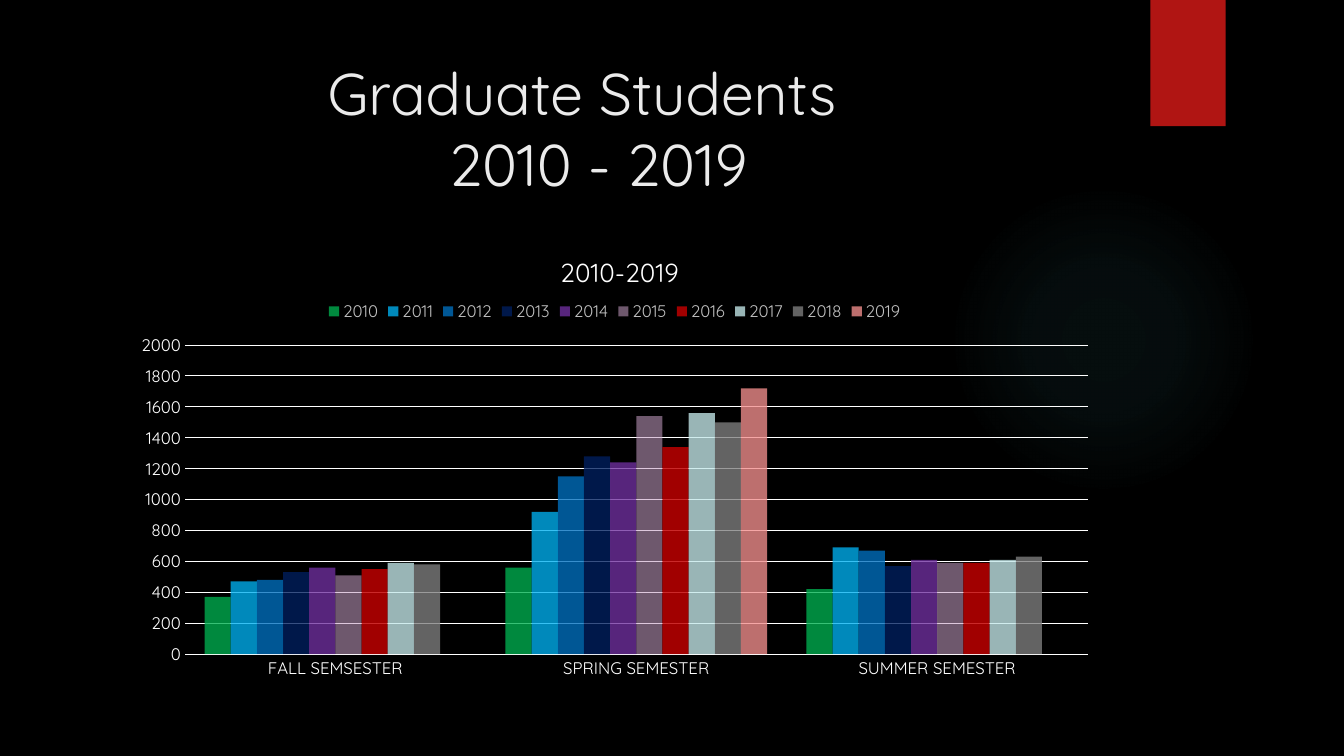
import lxml.etree
import pptx
import pptx.chart.data
import pptx.dml.color
import pptx.enum.chart
import pptx.enum.shapes
import pptx.enum.text
import pptx.oxml
import pptx.oxml.ns
import pptx.util
from pptx.util import Cm

FONT = "Quicksand"
SEMESTERS = ["FALL SEMSESTER", "SPRING SEMESTER", "SUMMER SEMESTER"]
# Year, students per semester, colour, opacity in percent
YEARS = [
    ("2010", (370, 560, 420), "00B050", 78),
    ("2011", (470, 920, 690), "00B0F0", 78),
    ("2012", (480, 1150, 670), "0070C0", 78),
    ("2013", (530, 1280, 570), "002060", 78),
    ("2014", (560, 1240, 610), "7030A0", 78),
    ("2015", (510, 1540, 590), "C59EC3", 56),
    ("2016", (550, 1340, 590), "C00000", 84),
    ("2017", (590, 1560, 610), "C5E8EA", 78),
    ("2018", (580, 1500, 630), "808080", 78),
    ("2019", (None, 1720, None), "F38F8D", 78),
]
GLOW_STOPS = [(0, 7), (36, 6), (69, 0)]


def paint(color_format, color):
    color_format.rgb = pptx.dml.color.RGBColor.from_string(color)


def fill_solid(fill, color):
    fill.solid()
    paint(fill.fore_color, color)


def set_format(target, values):
    for name, value in values.items():
        setattr(target, name, value)


def set_font(font, size, color):
    set_format(font, {"name": FONT, "size": pptx.util.Pt(size), "bold": False})
    paint(font.color, color)


def add_plain_shape(slide, kind, left, top, width, height, color):
    shape = slide.shapes.add_shape(kind, left, top, width, height)
    shape.shadow.inherit = False
    shape.line.fill.background()
    fill_solid(shape.fill, color)
    return shape


def add_glow(slide):
    glow = add_plain_shape(slide, pptx.enum.shapes.MSO_SHAPE.OVAL,
                           Cm(23.9), Cm(4.65), Cm(7.82), Cm(7.82), "50B9C1")
    stops = "".join(
        f'<a:gs pos="{position * 1000}"><a:srgbClr val="50B9C1">'
        f'<a:alpha val="{opacity * 1000}"/></a:srgbClr></a:gs>'
        for position, opacity in GLOW_STOPS)
    gradient = pptx.oxml.parse_xml(
        f'<a:gradFill {pptx.oxml.ns.nsdecls("a")}><a:gsLst>{stops}</a:gsLst>'
        '<a:path path="circle"><a:fillToRect l="50000" t="50000" r="50000" b="50000"/>'
        '</a:path></a:gradFill>')
    solid = glow.element.spPr.find(pptx.oxml.ns.qn("a:solidFill"))
    glow.element.spPr.replace(solid, gradient)


def add_title(slide, text):
    box = slide.shapes.add_textbox(Cm(1.8), Cm(1.27), Cm(26.14), Cm(3.89))
    set_format(box.text_frame, {
        "word_wrap": True, "margin_top": 0, "margin_bottom": 0,
        "vertical_anchor": pptx.enum.text.MSO_ANCHOR.MIDDLE})
    paragraph = box.text_frame.paragraphs[0]
    paragraph.text = text
    paragraph.alignment = pptx.enum.text.PP_ALIGN.CENTER
    for run in paragraph.runs:
        set_font(run.font, 42, "EBEBEB")


def set_layout(parent, index, inner=False, **fractions):
    """Place a chart part by fractions of the chart's size."""
    tag = pptx.oxml.ns.qn
    for old in parent.findall(tag("c:layout")):
        parent.remove(old)
    layout = parent.makeelement(tag("c:layout"))
    manual = lxml.etree.SubElement(layout, tag("c:manualLayout"))
    values = {"layoutTarget": "inner"} if inner else {}
    values.update({"xMode": "edge", "yMode": "edge"}, **fractions)
    for name, value in values.items():
        lxml.etree.SubElement(manual, tag("c:" + name)).set("val", str(value))
    parent.insert(index, layout)


def style_axis(axis):
    axis.major_tick_mark = pptx.enum.chart.XL_TICK_MARK.NONE
    axis.format.line.fill.background()
    set_font(axis.tick_labels.font, 12, "FFFFFF")


def style_series(series, color, opacity):
    fill_solid(series.format.fill, color)
    series.invert_if_negative = False
    color_element = next(series.format.fill._xPr.iter(pptx.oxml.ns.qn("a:srgbClr")))
    alpha = lxml.etree.SubElement(color_element, pptx.oxml.ns.qn("a:alpha"))
    alpha.set("val", str(opacity * 1000))


def add_student_chart(slide):
    data = pptx.chart.data.CategoryChartData()
    data.categories = SEMESTERS
    for year, students, _, _ in YEARS:
        data.add_series(year, students)
    chart = slide.shapes.add_chart(
        pptx.enum.chart.XL_CHART_TYPE.COLUMN_CLUSTERED,
        Cm(3.07), Cm(5.69), Cm(24.84), Cm(11.66), data).chart
    set_font(chart.font, 10, "FFFFFF")

    # Columns
    plot = chart.plots[0]
    set_format(plot, {"gap_width": 150, "overlap": 0, "vary_by_categories": False})
    for series, (_, _, color, opacity) in zip(plot.series, YEARS):
        style_series(series, color, opacity)

    # Axes and gridlines
    style_axis(chart.category_axis)
    style_axis(chart.value_axis)
    set_format(chart.value_axis, {"minimum_scale": 0, "maximum_scale": 2000,
                                  "major_unit": 200})
    grid_line = chart.value_axis.major_gridlines.format.line
    grid_line.width = pptx.util.Pt(0.75)
    fill_solid(grid_line.fill, "FFFFFF")

    # Title and legend
    chart.has_title = True
    chart.chart_title.text_frame.text = "2010-2019"
    set_font(chart.chart_title.text_frame.paragraphs[0].runs[0].font, 18.6, "FFFFFF")
    chart.has_legend = True
    set_format(chart.legend, {"position": pptx.enum.chart.XL_LEGEND_POSITION.TOP,
                              "include_in_layout": False})
    set_font(chart.legend.font, 12, "BFBFBF")

    # Placement inside the chart
    set_layout(chart.chart_title._element, 1, x=0.44, y=0.05)
    set_layout(chart.legend._element, 1, x=0.2, y=0.16, w=0.6, h=0.05)
    plot_area = chart._chartSpace.chart.plotArea
    set_layout(plot_area, 0, inner=True, x=0.064, y=0.258, w=0.916, h=0.668)


def main():
    presentation = pptx.Presentation()
    set_format(presentation, {"slide_width": Cm(33.87), "slide_height": Cm(19.05)})
    slide = presentation.slides.add_slide(presentation.slide_layouts[6])
    fill_solid(slide.background.fill, "000000")

    # Decoration
    add_glow(slide)
    add_plain_shape(slide, pptx.enum.shapes.MSO_SHAPE.RECTANGLE,
                    Cm(28.99), Cm(0), Cm(1.9), Cm(3.18), "B01513")

    # Content
    add_title(slide, "Graduate Students \v 2010 - 2019")
    add_student_chart(slide)
    presentation.save("out.pptx")


if __name__ == "__main__":
    main()
